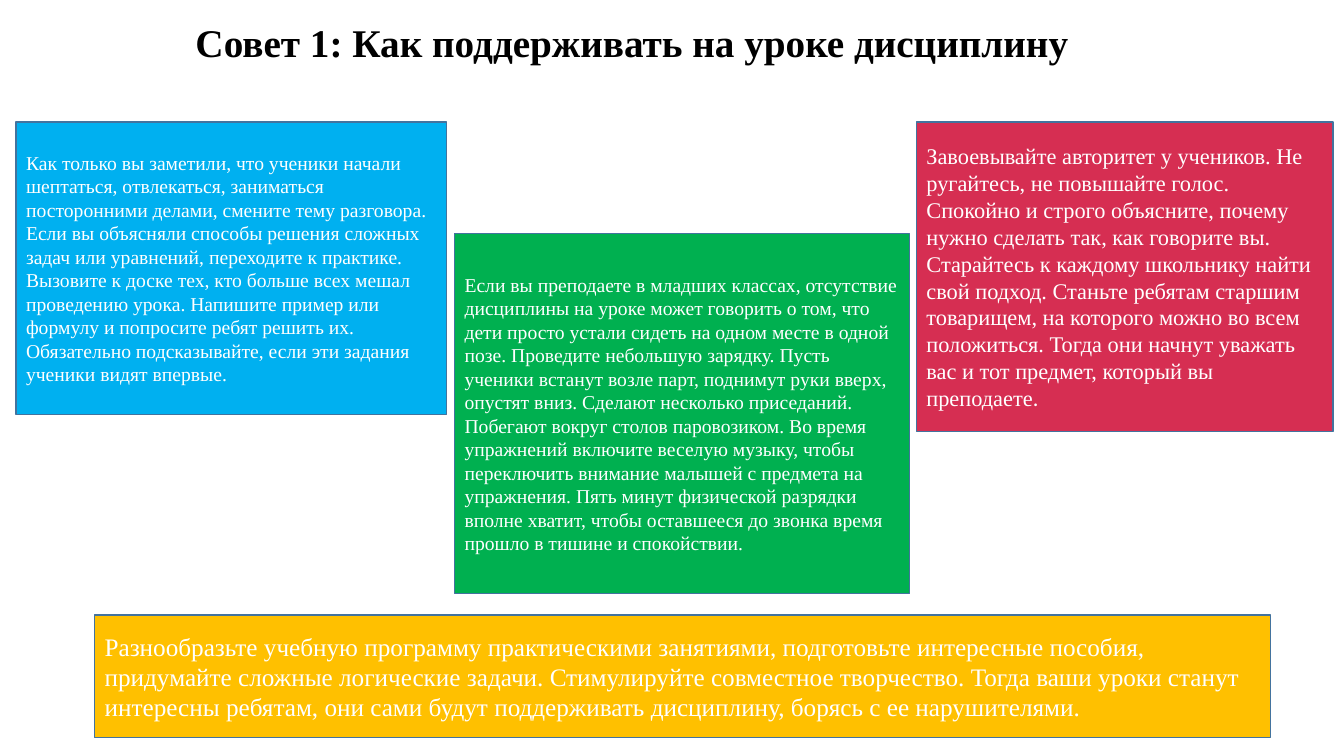
from dataclasses import dataclass

from pptx import Presentation
from pptx.dml.color import RGBColor
from pptx.enum.shapes import MSO_SHAPE as Shape
from pptx.enum.text import MSO_ANCHOR as Anchor, MSO_AUTO_SIZE as AutoSize, PP_ALIGN as Align
from pptx.util import Inches, Pt

BLACK = RGBColor(0x00, 0x00, 0x00)
WHITE = RGBColor(0xFF, 0xFF, 0xFF)
BLUE = RGBColor(0x00, 0xB0, 0xF0)
GREEN = RGBColor(0x00, 0xB0, 0x50)
RED = RGBColor(0xD6, 0x2E, 0x52)
YELLOW = RGBColor(0xFF, 0xC0, 0x00)
BORDER = RGBColor(0x43, 0x73, 0x9E)

SERIF = "Times New Roman"
SANS = "Calibri"
SLIDE_W, SLIDE_H = Inches(13.33), Inches(7.5)


@dataclass(frozen=True)
class Area:
    """Place and size in percent of the slide's width and height."""
    left: float
    top: float
    width: float
    height: float

    def box(self) -> tuple[int, int, int, int]:
        return (round(SLIDE_W * self.left / 100), round(SLIDE_H * self.top / 100),
                round(SLIDE_W * self.width / 100), round(SLIDE_H * self.height / 100))


@dataclass(frozen=True)
class Tip:
    area: Area
    fill: RGBColor
    size: int
    text: str
    end: str = ""  # closing mark set in the sans font


TITLE = "Совет 1: Как поддерживать на уроке дисциплину"
TITLE_AREA = Area(5.18, 1.73, 83.65, 7.6)
TOP_ROW = 16.13

TIPS = [
    Tip(Area(1.2, TOP_ROW, 32.03, 38.67), BLUE, 14,
        "Как только вы заметили, что ученики начали шептаться, отвлекаться, "
        "заниматься посторонними делами, смените тему разговора. Если вы объясняли "
        "способы решения сложных задач или уравнений, переходите к практике. "
        "Вызовите к доске тех, кто больше всех мешал проведению урока. Напишите "
        "пример или формулу и попросите ребят решить их. Обязательно "
        "подсказывайте, если эти задания ученики видят впервые."),
    Tip(Area(33.83, 30.93, 33.83, 47.6), GREEN, 14,
        "Если вы преподаете в младших классах, отсутствие дисциплины на уроке "
        "может говорить о том, что дети просто устали сидеть на одном месте в "
        "одной позе. Проведите небольшую зарядку. Пусть ученики встанут возле "
        "парт, поднимут руки вверх, опустят вниз. Сделают несколько приседаний. "
        "Побегают вокруг столов паровозиком. Во время упражнений включите веселую "
        "музыку, чтобы переключить внимание малышей с предмета на упражнения. "
        "Пять минут физической разрядки вполне хватит, чтобы оставшееся до звонка "
        "время прошло в тишине и спокойствии."),
    Tip(Area(68.19, TOP_ROW, 30.98, 40.93), RED, 16,
        "Завоевывайте авторитет у учеников. Не ругайтесь, не повышайте голос. "
        "Спокойно и строго объясните, почему нужно сделать так, как говорите вы. "
        "Старайтесь к каждому школьнику найти свой подход. Станьте ребятам "
        "старшим товарищем, на которого можно во всем положиться. Тогда они "
        "начнут уважать вас и тот предмет, который вы преподаете", end="."),
    Tip(Area(7.05, 81.33, 87.47, 16.27), YELLOW, 18,
        "Разнообразьте учебную программу практическими занятиями, подготовьте "
        "интересные пособия, придумайте сложные логические задачи. Стимулируйте "
        "совместное творчество. Тогда ваши уроки станут интересны ребятам, они "
        "сами будут поддерживать дисциплину, борясь с ее нарушителями."),
]


def add_text(p, text: str, *, size: int, color: RGBColor = WHITE, font: str = SERIF,
             bold: bool = False, align: Align = Align.LEFT) -> None:
    p.alignment = align
    r = p.add_run()
    r.text = text
    r.font.name = font
    r.font.size = Pt(size)
    r.font.bold = bold
    r.font.color.rgb = color


def add_title(s) -> None:
    tf = s.shapes.add_textbox(*TITLE_AREA.box()).text_frame
    tf.word_wrap = True
    tf.auto_size = AutoSize.SHAPE_TO_FIT_TEXT
    add_text(tf.paragraphs[0], TITLE, size=28, color=BLACK, bold=True, align=Align.CENTER)


def add_tip(s, tip: Tip) -> None:
    sp = s.shapes.add_shape(Shape.RECTANGLE, *tip.area.box())
    sp.shadow.inherit = False
    sp.fill.solid()
    sp.fill.fore_color.rgb = tip.fill
    sp.line.color.rgb = BORDER
    sp.line.width = Pt(1)
    tf = sp.text_frame
    tf.word_wrap = True
    tf.vertical_anchor = Anchor.MIDDLE
    p = tf.paragraphs[0]
    add_text(p, tip.text, size=tip.size)
    if tip.end:
        add_text(p, tip.end, size=tip.size, font=SANS)


def main() -> None:
    prs = Presentation()
    prs.slide_width, prs.slide_height = SLIDE_W, SLIDE_H
    s = prs.slides.add_slide(prs.slide_layouts[6])

    # Heading
    add_title(s)

    # Coloured advice boxes
    for tip in TIPS:
        add_tip(s, tip)

    prs.save("out.pptx")


if __name__ == "__main__":
    main()
